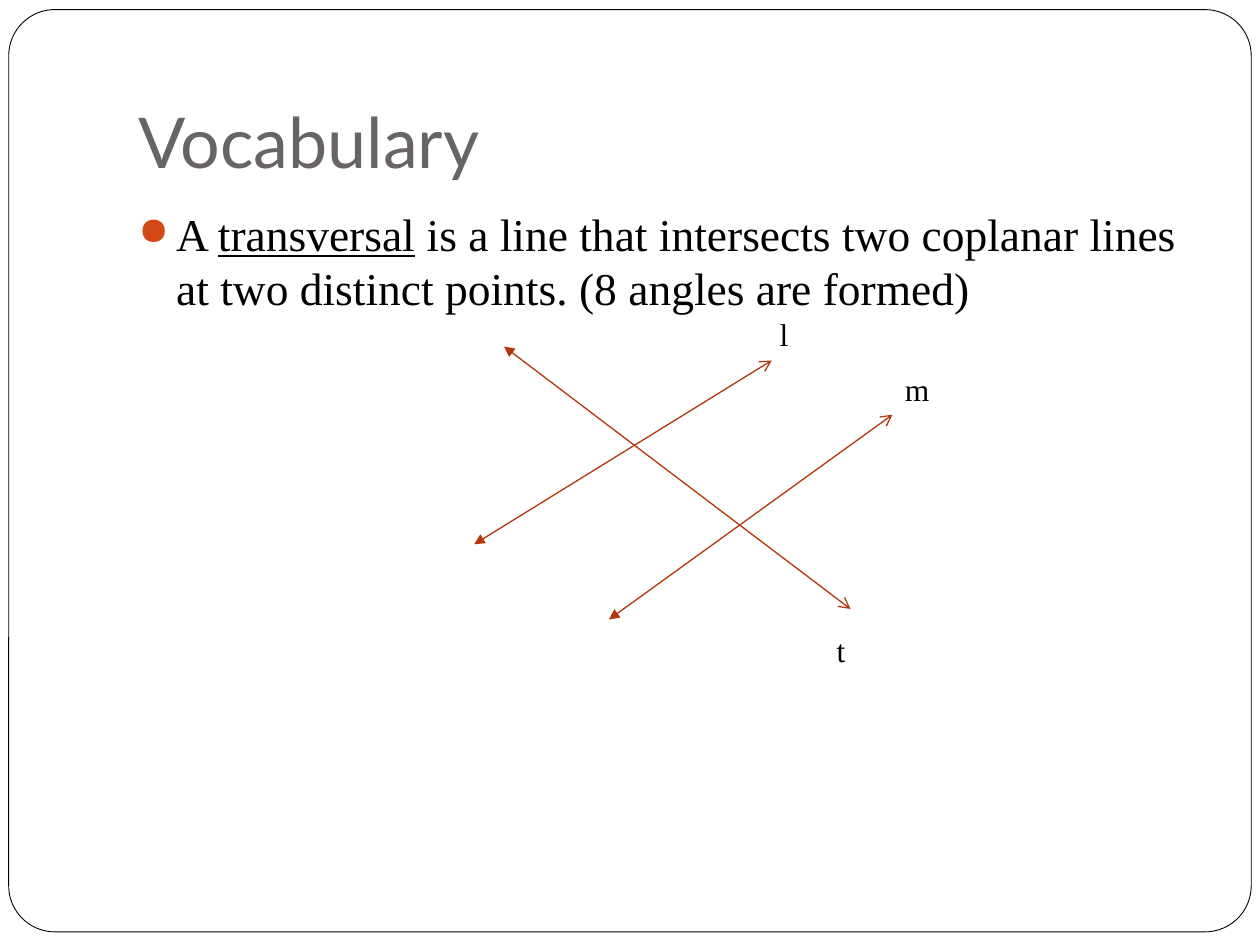
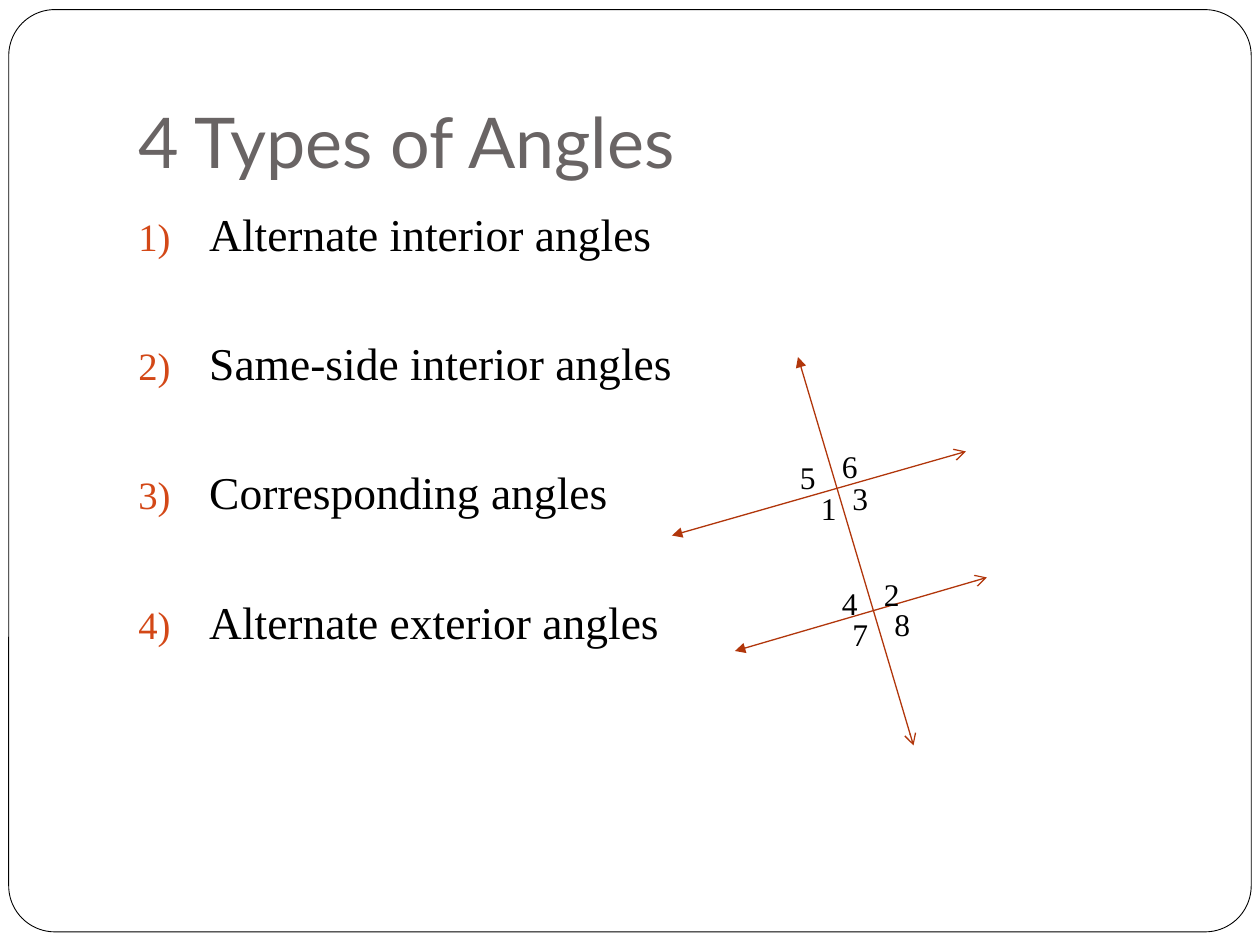
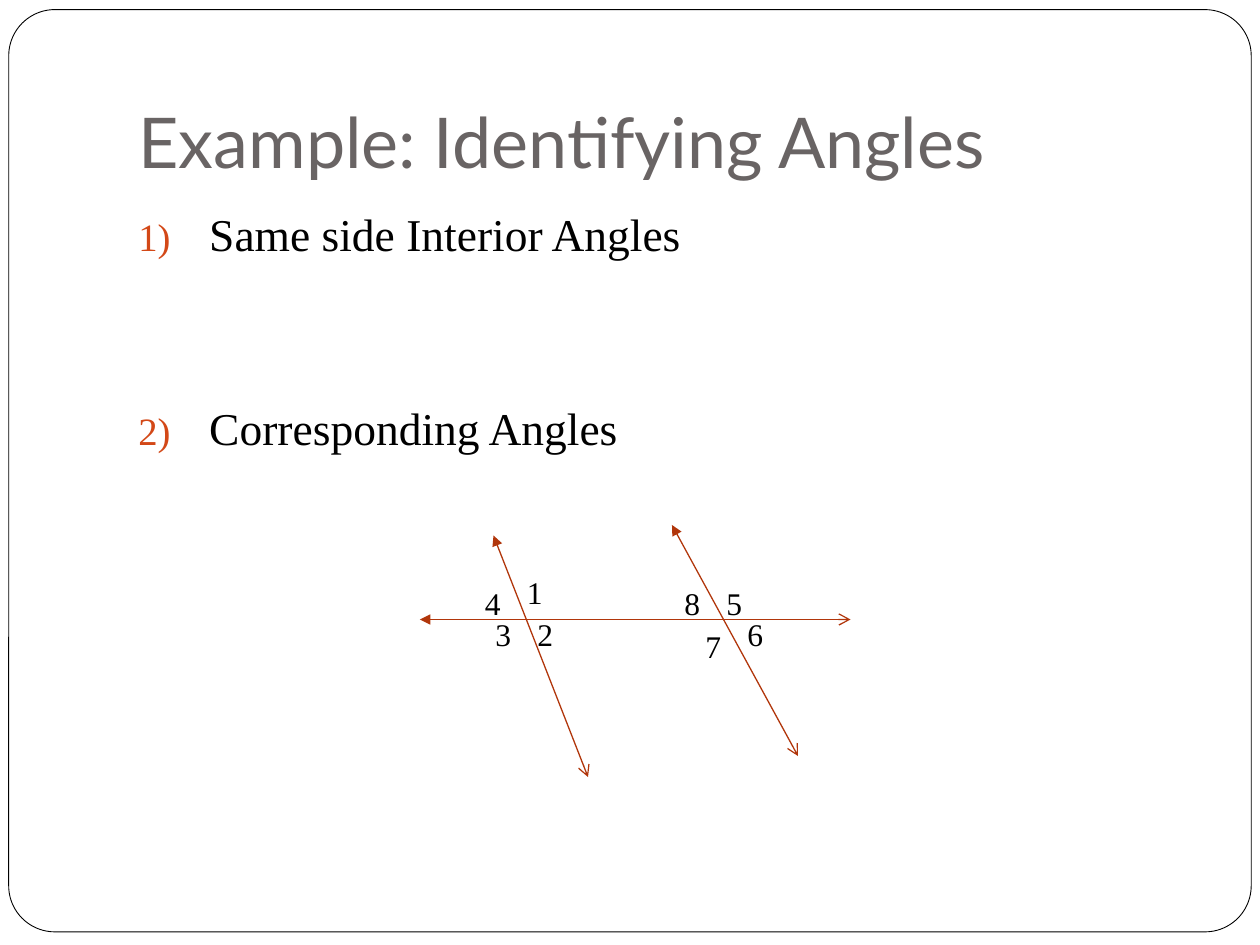
from dataclasses import dataclass

from lxml import etree
from pptx import Presentation
from pptx import util as u
from pptx.dml.color import RGBColor
from pptx.enum import shapes, text
from pptx.oxml.ns import qn


@dataclass(frozen=True)
class Theme:
    title_font: str = "Lato"
    body_font: str = "Times New Roman"
    title_size: int = 40
    body_size: int = 26
    label_size: int = 18
    paper: RGBColor = RGBColor.from_string("FFFFFF")
    ink: RGBColor = RGBColor.from_string("000000")
    title_color: RGBColor = RGBColor.from_string("696464")
    line_color: RGBColor = RGBColor.from_string("B1360B")
    bullet_color: str = "D34817"
    line_height: float = 31.15
    space_before: float = 5.8


theme = Theme()


def write_text(paragraph, content, font=theme.body_font, size=theme.body_size, color=theme.ink):
    paragraph.alignment = text.PP_ALIGN.LEFT
    for index, part in enumerate(content.split("_")):
        run = paragraph.add_run()
        run.text = part
        run.font.name = font
        run.font.size = u.Pt(size)
        run.font.color.rgb = color
        if index % 2:
            run.font.underline = True


def add_child(parent, tag, **attributes):
    return etree.SubElement(parent, qn(tag), attributes)


numbers = ("a:buAutoNum", {"type": "arabicParenR"})
dot = ("a:buChar", {"char": "●"})

lessons = [
    {
        "title": "Vocabulary",
        "items": ["A _transversal_ is a line that intersects two coplanar lines "
                  "at two distinct points. (8 angles are formed)"],
        "bullet": dot, "indent": 21.6, "skipped_lines": 0,
        "lines": [(271, 311, 441, 206), (348, 354, 510, 237), (288, 198, 486, 348)],
        "label_width": 30,
        "labels": [("l", 438.5, 176.5), ("m", 510, 208), ("t", 471, 357)],
    },
    {
        "title": "4 Types of Angles",
        "items": ["Alternate interior angles", "Same-side interior angles",
                  "Corresponding angles", "Alternate exterior angles"],
        "bullet": numbers, "indent": 40.5, "skipped_lines": 1,
        "lines": [(456, 204, 522, 426), (384, 306, 552, 258), (420, 372, 564, 330)],
        "label_width": 24,
        "labels": [("8", 504, 342), ("7", 480, 348), ("6", 474, 252), ("5", 450, 258),
                   ("4", 474, 330), ("3", 480, 270), ("2", 498, 325), ("1", 462, 276)],
    },
    {
        "title": "Example: Identifying Angles",
        "items": ["Same side Interior Angles", "Corresponding Angles"],
        "bullet": numbers, "indent": 40.5, "skipped_lines": 2,
        "lines": [(240, 354, 486, 354), (384, 300, 456, 432), (282, 306, 336, 444)],
        "label_width": 36,
        "labels": [("1", 294, 324), ("3", 276, 348), ("4", 270, 330), ("5", 408, 330),
                   ("6", 420, 348), ("7", 396, 355), ("8", 384, 330), ("2", 300, 348)],
    },
]

presentation = Presentation()
presentation.slide_width = u.Pt(720)
presentation.slide_height = u.Pt(540)
title_only = presentation.slide_layouts[5]

for lesson in lessons:
    slide = presentation.slides.add_slide(title_only)

    frame = slide.shapes.add_shape(shapes.MSO_SHAPE.ROUNDED_RECTANGLE,
                                   u.Pt(5), u.Pt(5.5), u.Pt(710), u.Pt(527))
    frame.adjustments[0] = 0.05
    frame.shadow.inherit = False
    frame.fill.solid()
    frame.fill.fore_color.rgb = theme.paper
    frame.line.color.rgb = theme.ink
    frame.line.width = u.Pt(0.5)
    frame.element.getparent().insert(2, frame.element)

    title = slide.shapes.title
    title.left, title.top, title.width, title.height = map(u.Pt, (72, 21.6, 612, 90))
    title.text_frame.auto_size = text.MSO_AUTO_SIZE.NONE
    title.text_frame.vertical_anchor = text.MSO_ANCHOR.BOTTOM
    title.text_frame.margin_bottom = u.Pt(7.2)
    write_text(title.text_frame.paragraphs[0], lesson["title"], font=theme.title_font,
               size=theme.title_size, color=theme.title_color)

    body = slide.shapes.add_textbox(u.Pt(72), u.Pt(114), u.Pt(612), u.Pt(360))
    body.text_frame.word_wrap = True
    gap = lesson["skipped_lines"] * (theme.line_height + theme.space_before)
    for index, item in enumerate(lesson["items"]):
        paragraph = body.text_frame.paragraphs[0] if index == 0 else body.text_frame.add_paragraph()
        write_text(paragraph, item)
        paragraph.line_spacing = u.Pt(theme.line_height)
        paragraph.space_before = u.Pt(theme.space_before + (gap if index else 0))
        properties = paragraph._p.get_or_add_pPr()
        properties.set("marL", str(u.Pt(lesson["indent"])))
        properties.set("indent", str(-u.Pt(lesson["indent"])))
        add_child(add_child(properties, "a:buClr"), "a:srgbClr", val=theme.bullet_color)
        add_child(properties, "a:buSzPct", val="85000")
        bullet_tag, bullet_attributes = lesson["bullet"]
        add_child(properties, bullet_tag, **bullet_attributes)

    for ends in lesson["lines"]:
        line = slide.shapes.add_connector(shapes.MSO_CONNECTOR.STRAIGHT, *map(u.Pt, ends))
        line.line.color.rgb = theme.line_color
        line.line.width = u.Pt(0.75)
        outline = line.element.spPr.find(qn("a:ln"))
        add_child(outline, "a:headEnd", type="triangle")
        add_child(outline, "a:tailEnd", type="arrow")
        add_child(line.element.spPr, "a:effectLst")

    for name, left, top in lesson["labels"]:
        label = slide.shapes.add_textbox(u.Pt(left), u.Pt(top),
                                         u.Pt(lesson["label_width"]), u.Pt(29))
        label.text_frame.word_wrap = True
        label.text_frame.auto_size = text.MSO_AUTO_SIZE.SHAPE_TO_FIT_TEXT
        write_text(label.text_frame.paragraphs[0], name, size=theme.label_size)

presentation.save("out.pptx")
